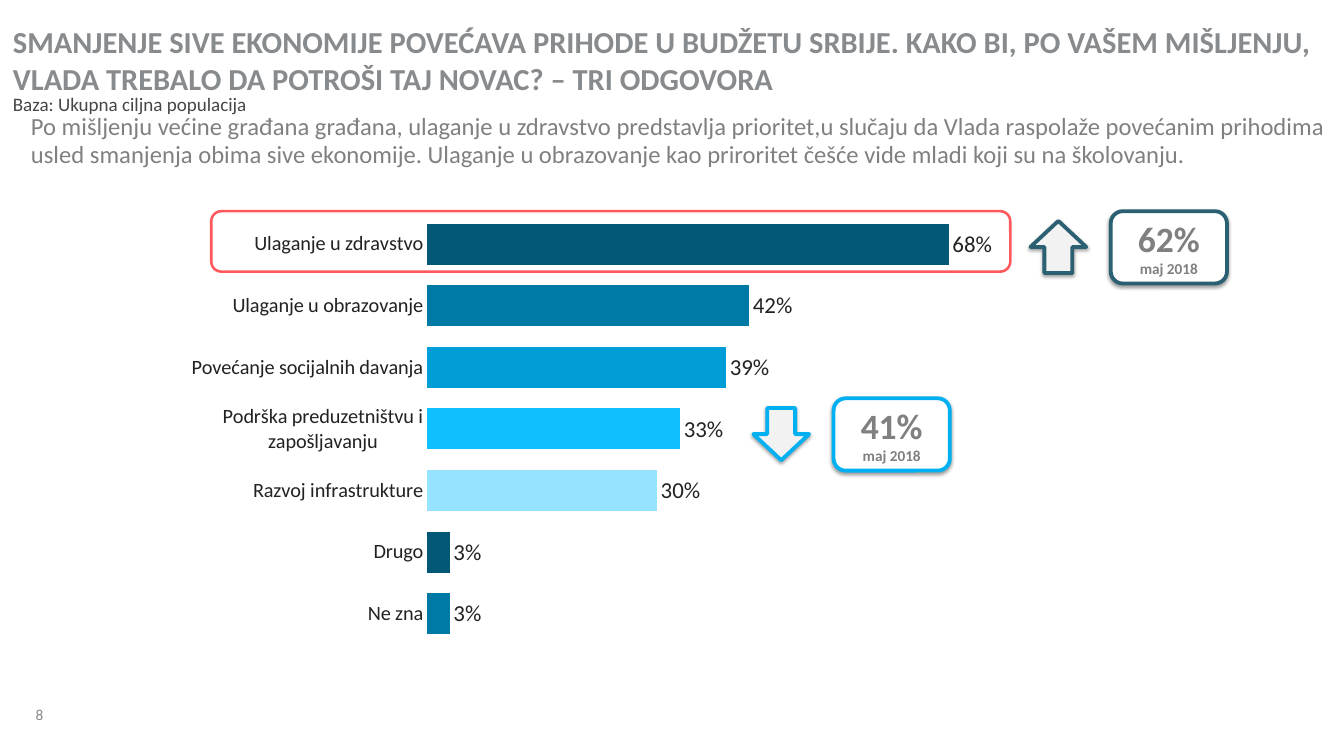
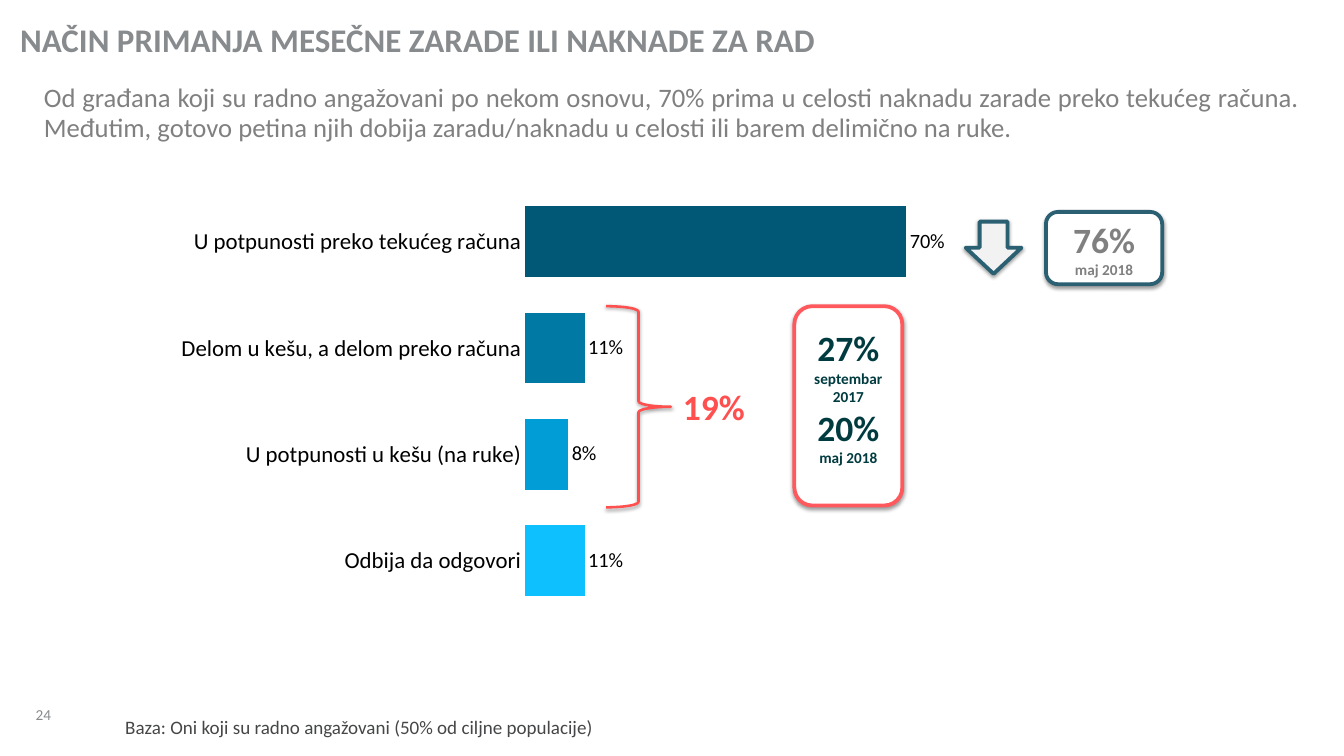
import pptx
import pptx.chart.data
import pptx.dml.color
import pptx.enum.chart
import pptx.enum.shapes
import pptx.enum.text
import pptx.oxml
import pptx.oxml.ns
import pptx.util

Cm = pptx.util.Cm
Pt = pptx.util.Pt
SHAPE = pptx.enum.shapes.MSO_SHAPE
ALIGN = pptx.enum.text.PP_ALIGN
ANCHOR = pptx.enum.text.MSO_ANCHOR

FONT = "Calibri"
TITLE_GREY = "888B8D"
BODY_GREY = "808080"
NOTE_GREY = "444647"
AXIS_GREY = "222223"
BLACK = "000000"
WHITE = "FFFFFF"
ARROW_GREY = "F2F2F2"
PETROL = "2B5F72"
SKY = "00B0F0"
CORAL = "FF585D"
RED = "FF5050"
DEEP_GREEN = "003B40"
BAR_BLUES = ["005776", "007AA5", "009DD6", "0FC0FF", "95E3FF"]


def rgb(value):
    return pptx.dml.color.RGBColor.from_string(value)


def frame(place):
    return [Cm(length) for length in place]


def style_font(font, size, color, bold=False):
    font.name = FONT
    font.size = Pt(size)
    font.color.rgb = rgb(color)
    font.bold = bold


class Report:
    def __init__(self):
        self.deck = pptx.Presentation()
        self.deck.slide_width = Cm(37.34)
        self.deck.slide_height = Cm(21.01)
        self.slide = None

    def page(self, number):
        self.slide = self.deck.slides.add_slide(self.deck.slide_layouts[6])
        self.text((0.99, 19.13, 1.24, 0.97), str(number), 12, TITLE_GREY,
                  anchor=ANCHOR.BOTTOM, spacing=0.85)

    def text(self, place, words, size, color, bold=False, align=ALIGN.LEFT,
             anchor=ANCHOR.TOP, spacing=1.0):
        box = self.slide.shapes.add_textbox(*frame(place))
        self.fill_text(box, [(words, size)], color, bold, align, anchor, (0, 0, 0, 0))
        box.text_frame.paragraphs[0].line_spacing = spacing

    def fill_text(self, shape, lines, color, bold, align, anchor, insets):
        text = shape.text_frame
        text.word_wrap = True
        text.vertical_anchor = anchor
        (text.margin_left, text.margin_top,
         text.margin_right, text.margin_bottom) = frame(insets)
        text.text = "\n".join(words for words, size in lines)
        for para, (words, size) in zip(text.paragraphs, lines):
            para.alignment = align
            for span in para.runs:
                style_font(span.font, size, color, bold)

    def title(self, place, words, size):
        self.text(place, words, size, TITLE_GREY, bold=True)

    def summary(self, place, words, size, align=ALIGN.LEFT):
        self.text(place, words, size, BODY_GREY, align=align, spacing=0.95)

    def base_note(self, place, words):
        self.text(place, words, 15, NOTE_GREY, anchor=ANCHOR.BOTTOM, spacing=0.95)

    def shape(self, kind, place, line, width, fill=None, shadow=True):
        shape = self.slide.shapes.add_shape(kind, *frame(place))
        shape.line.color.rgb = rgb(line)
        shape.line.width = Pt(width)
        if fill:
            shape.fill.solid()
            shape.fill.fore_color.rgb = rgb(fill)
        else:
            shape.fill.background()
        shape.shadow.inherit = False
        if shadow:
            effects = shape._element.spPr.find(pptx.oxml.ns.qn("a:effectLst"))
            effects.append(pptx.oxml.parse_xml(
                f'<a:outerShdw {pptx.oxml.ns.nsdecls("a")} blurRad="{Pt(3.1)}" '
                f'dist="{Pt(1.6)}" dir="5400000" rotWithShape="0">'
                '<a:srgbClr val="000000"><a:alpha val="38000"/></a:srgbClr>'
                '</a:outerShdw>'))
        return shape

    def badge(self, place, lines, line, color=BODY_GREY, bottom=0.18):
        badge = self.shape(SHAPE.ROUNDED_RECTANGLE, place, line, 3, WHITE)
        self.fill_text(badge, lines, color, True, ALIGN.CENTER, ANCHOR.MIDDLE,
                       (0.38, 0.18, 0.38, bottom))

    def trend(self, left, top, arrow, share, line):
        self.shape(arrow, (left - 2.23, top + 0.27, 1.55, 1.45), line, 3, ARROW_GREY)
        self.badge((left, top, 3.23, 2.01), [(share, 28), ("maj 2018", 12)], line)

    def bar_chart(self, place, plot, answers, axis_size, label_size, color):
        data = pptx.chart.data.CategoryChartData()
        data.categories = [answer for answer, share in answers]
        data.add_series("Series 1", [share for answer, share in answers])
        chart = self.slide.shapes.add_chart(
            pptx.enum.chart.XL_CHART_TYPE.BAR_CLUSTERED, *frame(place), data).chart
        style_font(chart.font, label_size, color)
        chart.has_legend = False
        chart.has_title = False

        axis = chart.category_axis
        axis.reverse_order = True
        axis.major_tick_mark = pptx.enum.chart.XL_TICK_MARK.NONE
        axis.format.line.fill.background()
        style_font(axis.tick_labels.font, axis_size, color)
        scale = chart.value_axis
        scale.minimum_scale = 0
        scale.maximum_scale = 80
        scale.has_major_gridlines = False
        scale.visible = False

        bars = chart.plots[0]
        bars.gap_width = 50
        bars.vary_by_categories = False
        for index in range(len(answers)):
            fill = bars.series[0].points[index].format.fill
            fill.solid()
            fill.fore_color.rgb = rgb(BAR_BLUES[index % len(BAR_BLUES)])
        bars.has_data_labels = True
        labels = bars.data_labels
        labels.show_value = True
        labels.number_format = '0"%"'
        labels.number_format_is_linked = False
        labels.position = pptx.enum.chart.XL_LABEL_POSITION.OUTSIDE_END
        style_font(labels.font, label_size, color)
        self.place_plot(chart, plot)

    def place_plot(self, chart, plot):
        area = chart._chartSpace.chart.plotArea
        for layout in area.findall(pptx.oxml.ns.qn("c:layout")):
            area.remove(layout)
        sizes = "".join(f'<c:{name} val="{value}"/>' for name, value in zip("xywh", plot))
        area.insert(0, pptx.oxml.parse_xml(
            f'<c:layout {pptx.oxml.ns.nsdecls("c")}><c:manualLayout>'
            '<c:layoutTarget val="inner"/><c:xMode val="edge"/><c:yMode val="edge"/>'
            f'{sizes}</c:manualLayout></c:layout>'))


def spending_page(report):
    report.page(8)
    report.base_note((0.36, 1.93, 25.78, 1.3), "Baza: Ukupna ciljna populacija")
    report.summary(
        (0.86, 3.15, 36.02, 2.18),
        "Po mišljenju većine građana građana, ulaganje u zdravstvo predstavlja "
        "prioritet,u slučaju da Vlada raspolaže povećanim prihodima usled smanjenja "
        "obima sive ekonomije. Ulaganje u obrazovanje kao priroritet češće vide mladi "
        "koji su na školovanju.", 19.4)
    report.title(
        (0.36, 0.64, 36.53, 1.8),
        "SMANJENJE SIVE EKONOMIJE POVEĆAVA PRIHODE U BUDŽETU SRBIJE. KAKO BI, PO VAŠEM "
        "MIŠLJENJU, VLADA TREBALO DA POTROŠI TAJ NOVAC? – TRI ODGOVORA", 24)
    answers = [
        ("Ulaganje u zdravstvo", 68),
        ("Ulaganje u obrazovanje", 42),
        ("Povećanje socijalnih davanja", 39),
        ("Podrška preduzetništvu i zapošljavanju", 33),
        ("Razvoj infrastrukture", 30),
        ("Drugo", 3),
        ("Ne zna", 3),
    ]
    report.bar_chart((5.26, 5.51, 24, 12.75), (0.275, 0.033, 0.711, 0.94),
                     answers, 16, 18, AXIS_GREY)
    report.trend(30.86, 5.87, SHAPE.UP_ARROW, "62%", PETROL)
    report.shape(SHAPE.ROUNDED_RECTANGLE, (5.87, 5.87, 22.2, 1.68), CORAL, 2, shadow=False)
    report.trend(23.16, 11.07, SHAPE.DOWN_ARROW, "41%", SKY)


def salary_page(report):
    report.page(24)
    report.base_note((3.48, 19.23, 13.03, 1.3),
                     "Baza: Oni koji su radno angažovani (50% od ciljne populacije)")
    report.title((0.56, 0.53, 36.53, 1.12),
                 "NAČIN PRIMANJA MESEČNE ZARADE ILI NAKNADE ZA RAD", 26)
    report.summary(
        (1.22, 2.31, 34.87, 1.57),
        "Od građana koji su radno angažovani po nekom osnovu, 70% prima u celosti "
        "naknadu zarade preko tekućeg računa. Međutim, gotovo petina njih dobija "
        "zaradu/naknadu u celosti ili barem delimično na ruke.", 21, ALIGN.JUSTIFY)
    answers = [
        ("U potpunosti preko tekućeg računa", 70),
        ("Delom u kešu, a delom preko računa", 11),
        ("U potpunosti u kešu (na ruke)", 8),
        ("Odbija da odgovori", 11),
        ("", None),
    ]
    report.bar_chart((4.11, 4.7, 22.61, 15.39), (0.463, 0.035, 0.536, 0.96),
                     answers, 18, 16, BLACK)
    report.shape(SHAPE.RIGHT_BRACE, (16.84, 8.51, 1.8, 5.59), RED, 2)
    report.text((18.26, 10.57, 3.15, 1.45), "19%", 28, RED, bold=True,
                align=ALIGN.CENTER, anchor=ANCHOR.MIDDLE)
    report.trend(29.06, 5.89, SHAPE.DOWN_ARROW, "76%", PETROL)
    report.badge((22.07, 8.51, 3, 5.54),
                 [("27%", 28), ("septembar 2017", 12), ("20%", 28), ("maj 2018", 12)],
                 CORAL, DEEP_GREEN, bottom=0.7)


def main():
    report = Report()
    spending_page(report)
    salary_page(report)
    report.deck.save("out.pptx")


if __name__ == "__main__":
    main()
